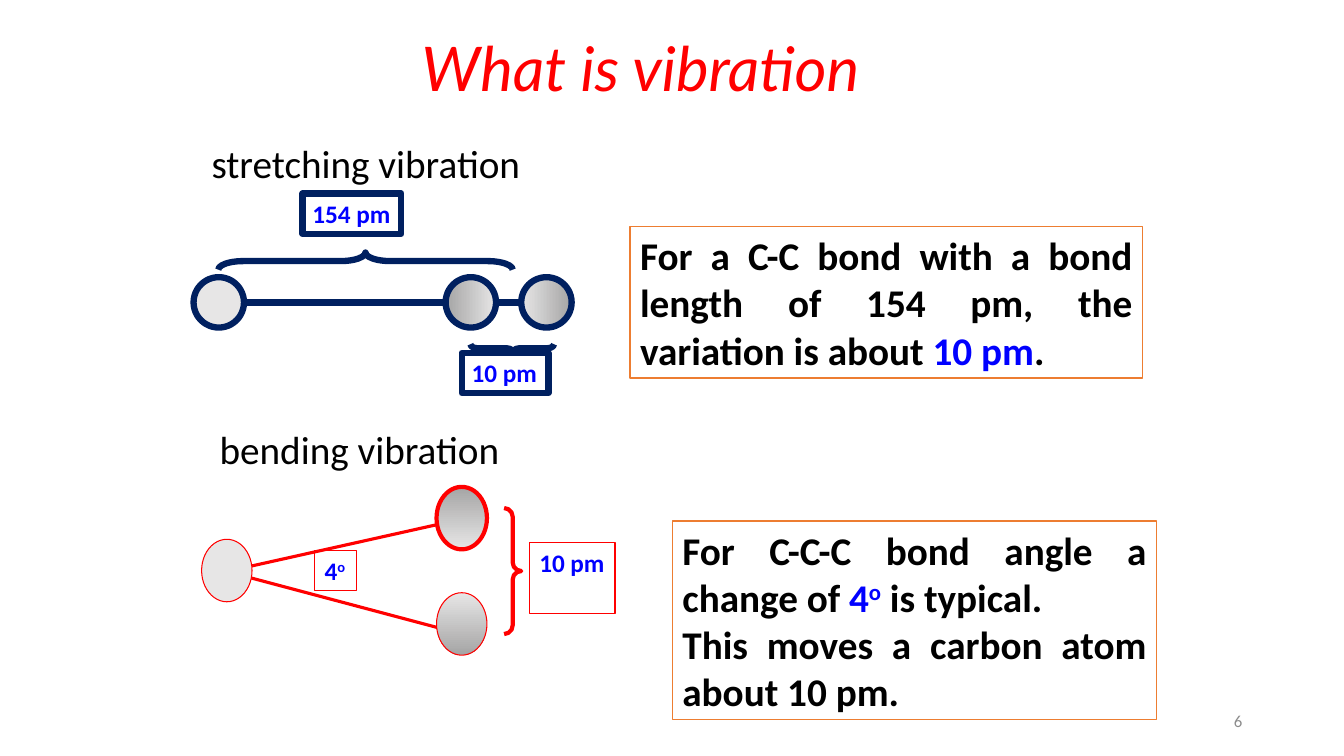
from lxml import etree
from pptx import Presentation
from pptx.dml.color import RGBColor
from pptx.enum.shapes import MSO_CONNECTOR, MSO_SHAPE
from pptx.enum.text import MSO_ANCHOR, PP_ALIGN
from pptx.oxml.ns import qn
from pptx.util import Inches, Pt

STRAIGHT = MSO_CONNECTOR.STRAIGHT
OVAL = MSO_SHAPE.OVAL
RIGHT_BRACE = MSO_SHAPE.RIGHT_BRACE
LEFT, RIGHT, JUSTIFY = PP_ALIGN.LEFT, PP_ALIGN.RIGHT, PP_ALIGN.JUSTIFY
TOP, MIDDLE = MSO_ANCHOR.TOP, MSO_ANCHOR.MIDDLE

RED = RGBColor(0xFF, 0x00, 0x00)
NAVY = RGBColor(0x00, 0x20, 0x60)
BLUE = RGBColor(0x00, 0x00, 0xFF)
ORANGE = RGBColor(0xED, 0x7D, 0x31)
BLACK = RGBColor(0x00, 0x00, 0x00)
WHITE = RGBColor(0xFF, 0xFF, 0xFF)
LIGHT = RGBColor(0xE7, 0xE6, 0xE6)
GRAY = RGBColor(0xA5, 0xA5, 0xA5)
NUMBER_GRAY = RGBColor(0x8C, 0x8C, 0x8C)


def set_line(part, color, width):
    """Colour the outline of a part and set its width in points."""
    part.line.color.rgb = color
    part.line.width = Pt(width)


def write(paragraph, pieces, size, color, bold=False, align=LEFT):
    """Fill a paragraph with (text, colour, superscript) pieces."""
    paragraph.alignment = align
    font = paragraph.font
    font.name, font.size, font.bold = "Calibri", Pt(size), bold
    font.color.rgb = color
    for text, piece_color, superscript in pieces:
        run = paragraph.add_run()
        run.text = text
        if piece_color != color:
            run.font.color.rgb = piece_color
        if superscript:
            run._r.get_or_add_rPr().set("baseline", "30000")


def add_text(slide, box, paragraphs, size, color, bold=False, align=LEFT, wrap=True):
    """Add a text box with one list of pieces per paragraph."""
    label = slide.shapes.add_textbox(*map(Inches, box))
    frame = label.text_frame
    frame.word_wrap = wrap
    for index, pieces in enumerate(paragraphs):
        paragraph = frame.add_paragraph() if index else frame.paragraphs[0]
        write(paragraph, pieces, size, color, bold, align)
    return label


def add_heading(slide, box, text):
    """Add the heading above a vibration diagram."""
    add_text(slide, box, [[(text, BLACK, False)]], 28, BLACK, wrap=False)


def add_measure(slide, box, pieces, color, width, wrap=False):
    """Add an outlined blue measurement."""
    pieces = [(text, BLUE, raised) for text, raised in pieces]
    measure = add_text(slide, box, [pieces], 18, BLUE, bold=True, wrap=wrap)
    set_line(measure, color, width)


def add_bond(slide, start, end, color, width):
    """Draw a straight bond between two points."""
    bond = slide.shapes.add_connector(STRAIGHT, *map(Inches, start + end))
    set_line(bond, color, width)
    etree.SubElement(bond._element.spPr, qn("a:effectLst"))


def add_atom(slide, box, colors, color, width, angle=0):
    """Draw an atom with a plain fill or a two-colour gradient."""
    atom = slide.shapes.add_shape(OVAL, *map(Inches, box))
    atom.shadow.inherit = False
    if len(colors) == 1:
        atom.fill.solid()
        atom.fill.fore_color.rgb = colors[0]
    else:
        atom.fill.gradient()
        atom.fill.gradient_angle = angle
        for stop, stop_color in zip(atom.fill.gradient_stops, colors):
            stop.color.rgb = stop_color
    set_line(atom, color, width)


def add_brace(slide, box, curve, tip, color, width, rotation=0):
    """Draw an unfilled brace, turned by the given rotation."""
    brace = slide.shapes.add_shape(RIGHT_BRACE, *map(Inches, box))
    brace.shadow.inherit = False
    brace.fill.background()
    brace.adjustments[0], brace.adjustments[1] = curve, tip
    brace.rotation = rotation
    set_line(brace, color, width)


def add_title(slide, box):
    """Place the slide title."""
    title = slide.shapes.title
    title.left, title.top, title.width, title.height = map(Inches, box)
    frame = title.text_frame
    frame.vertical_anchor = TOP
    frame.word_wrap = True
    paragraph = frame.paragraphs[0]
    paragraph.text = "What is vibration"
    paragraph.alignment = LEFT
    paragraph.line_spacing = 1.0
    font = paragraph.font
    font.name, font.size, font.italic = "Lato", Pt(44), True
    font.color.rgb = RED


def add_stretching(slide, left, top):
    """Draw the stretching diagram from its top left corner."""
    width, atom = 4.5, 0.5
    atom_top = top + 1.42
    axis = atom_top + atom / 2
    add_bond(slide, (left + 0.25, axis), (left + 3.5, axis), NAVY, width)
    for offset, colors in ((3.25, (LIGHT, GRAY)), (2.5, (GRAY, LIGHT)), (0, (LIGHT,))):
        add_atom(slide, (left + offset, atom_top, atom, atom), colors, NAVY, width)
    add_brace(slide, (left + 3.12, top + 1.71, 0.08, 0.83), 0.83, 0.49, NAVY, width, 90)
    add_measure(slide, (left + 2.66, top + 2.17, 0.86, 0.4), [("10 pm", False)], NAVY, width)
    add_brace(slide, (left + 1.62, top - 0.2, 0.17, 2.92), 1.46, 0.5, NAVY, width, 270)
    add_measure(slide, (left + 1.08, top + 0.59, 0.98, 0.4), [("154 pm", False)], NAVY, width)
    add_heading(slide, (left + 0.08, top, 3.3, 0.57), "stretching vibration")


def add_bending(slide, left, top):
    """Draw the bending diagram from its top left corner."""
    pivot = (left + 0.25, top + 1.5)
    for end_offset in (0.98, 2.12):
        add_bond(slide, pivot, (left + 2.58, top + end_offset), RED, 2.25)
    atoms = (
        (0, 1.18, (LIGHT,), 0.75),
        (2.33, 1.71, (LIGHT, GRAY), 0.75),
        (2.33, 0.66, (GRAY, LIGHT), 3),
    )
    for x, y, colors, width in atoms:
        add_atom(slide, (left + x, top + y, 0.5, 0.62), colors, RED, width, 270)
    angle = [("4", False), ("o", True)]
    add_measure(slide, (left + 1.12, top + 1.29, 0.42, 0.4), angle, RED, 0.75)
    add_brace(slide, (left + 3, top + 0.87, 0.17, 1.25), 0.5, 0.5, RED, 3)
    add_measure(slide, (left + 3.25, top + 1.21, 0.85, 0.71), [("10 pm", False)], RED, 0.75, True)
    add_heading(slide, (left + 0.08, top, 3.01, 0.57), "bending vibration")


def add_explanation(slide, box, paragraphs):
    """Add a framed, justified explanation."""
    explanation = add_text(slide, box, paragraphs, 28, BLACK, bold=True, align=JUSTIFY)
    explanation.fill.solid()
    explanation.fill.fore_color.rgb = WHITE
    set_line(explanation, ORANGE, 1)


def add_slide_number(slide, box):
    """Add the slide number at the lower right."""
    number = add_text(slide, box, [[("6", NUMBER_GRAY, False)]], 12, NUMBER_GRAY, align=RIGHT)
    number.text_frame.vertical_anchor = MIDDLE


def main():
    """Build and save the vibration slide."""
    deck = Presentation()
    deck.slide_width, deck.slide_height = Inches(13.33), Inches(7.5)
    slide = deck.slides.add_slide(deck.slide_layouts.get_by_name("Title Only"))
    add_title(slide, (4.08, 0.25, 6.03, 0.84))
    add_explanation(slide, (6.25, 2.25, 5.08, 1.5), [[
        ("For a C-C bond with a bond length of 154 pm, the variation is about ", BLACK, False),
        ("10 pm", BLUE, False),
        (".", BLACK, False),
    ]])
    add_explanation(slide, (6.67, 5.17, 4.8, 1.97), [
        [
            ("For C-C-C bond angle a change of ", BLACK, False),
            ("4", BLUE, False),
            ("o", BLUE, True),
            (" is typical.", BLACK, False),
        ],
        [("This moves a carbon atom about 10 pm.", BLACK, False)],
    ])
    add_bending(slide, 2, 4.17)
    add_stretching(slide, 1.92, 1.33)
    add_slide_number(slide, (9.42, 6.95, 3, 0.4))
    deck.save("out.pptx")


if __name__ == "__main__":
    main()
